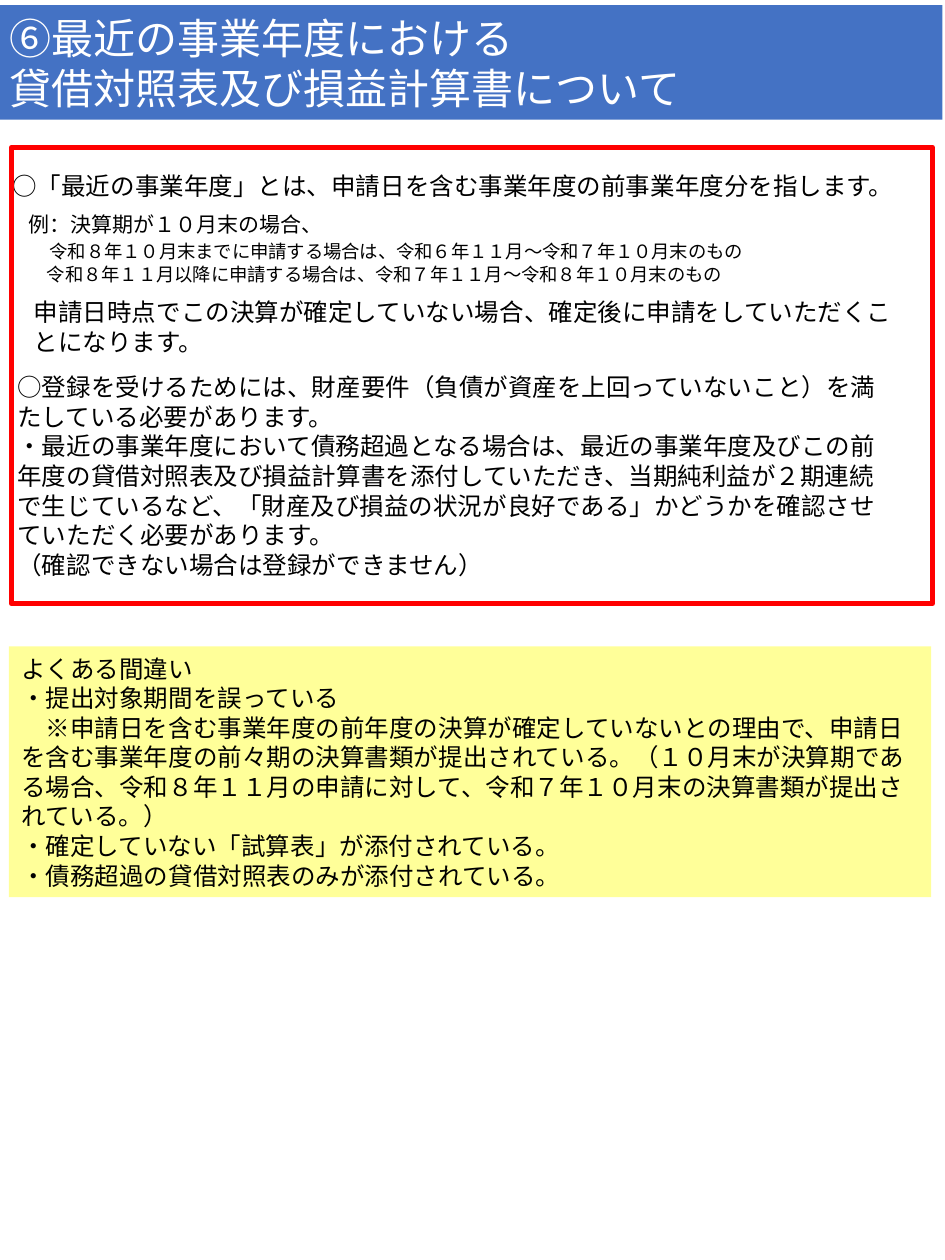
from lxml.etree import SubElement
from pptx import Presentation
from pptx.dml.color import RGBColor as RGB
from pptx.enum.shapes import MSO_SHAPE as Shape
from pptx.enum.text import MSO_ANCHOR as Anchor, PP_ALIGN as Align
from pptx.oxml.ns import qn
from pptx.util import Inches, Pt

THEME = {
    "font": "Noto Sans CJK JP", "leading": 1.21,
    "title": 24, "body": 14, "example": 12, "detail": 10.5,
    "white": "FFFFFF", "black": "000000",
    "blue": "4472C4", "red": "FF0000", "yellow": "FFFF99",
}

TITLE = ["⑥最近の事業年度における", "貸借対照表及び損益計算書について"]
PERIOD = ["○「最近の事業年度」とは、申請日を含む事業年度の前事業年度分を指します。"]
UNSETTLED = ["申請日時点でこの決算が確定していない場合、確定後に申請をしていただくことになります。"]
ASSETS = [
    "○登録を受けるためには、財産要件（負債が資産を上回っていないこと）を満たしている必要があります。",
    "・最近の事業年度において債務超過となる場合は、最近の事業年度及びこの前年度の貸借対照表及び損益計算書を添付していただき、当期純利益が２期連続で生じているなど、「財産及び損益の状況が良好である」かどうかを確認させていただく必要があります。",
    "（確認できない場合は登録ができません）",
]
MISTAKES = [
    "よくある間違い",
    "・提出対象期間を誤っている",
    "　※申請日を含む事業年度の前年度の決算が確定していないとの理由で、申請日を含む事業年度の前々期の決算書類が提出されている。（１０月末が決算期である場合、令和８年１１月の申請に対して、令和７年１０月末の決算書類が提出されている。）",
    "・確定していない「試算表」が添付されている。",
    "・債務超過の貸借対照表のみが添付されている。",
]
EXAMPLE = [
    "例：決算期が１０月末の場合、",
    [("　", "example"),
     ("令和８年１０月末までに申請する場合は、令和６年１１月～令和７年１０月末のもの", "detail")],
    [("　令和８年１１月以降に申請する場合は、令和７年１１月～令和８年１０月末のもの", "detail")],
]

BOXES = [
    {"at": (-0.02, 0.04, 7.5, 0.91), "text": TITLE, "size": "title", "color": "white", "fill": "blue"},
    {"at": (0, 1.3, 7.47, 0.34), "text": PERIOD},
    {"at": (0.09, 1.17, 7.31, 3.62), "line": "red"},
    {"at": (0.17, 2.31, 7.05, 0.57), "text": UNSETTLED},
    {"at": (0.04, 2.9, 7.17, 1.75), "text": ASSETS},
    {"at": (0.07, 5.13, 7.32, 1.99), "text": MISTAKES, "fill": "yellow"},
    {"at": (0.13, 1.63, 6.09, 0.68), "text": EXAMPLE, "size": "example"},
]


def color(name):
    return RGB.from_string(THEME[name])


def write(tf, paragraphs, size="body", ink="black"):
    for name, value in {"word_wrap": True, "vertical_anchor": Anchor.MIDDLE}.items():
        setattr(tf, name, value)
    for i, text in enumerate(paragraphs):
        p = tf.add_paragraph() if i else tf.paragraphs[0]
        runs = [(text, size)] if isinstance(text, str) else text
        largest = max(THEME[key] for _, key in runs)
        p.alignment = Align.LEFT
        p.line_spacing = Pt(round(largest * THEME["leading"], 1))
        for words, key in runs:
            r = p.add_run()
            r.text = words
            for name, value in {"size": Pt(THEME[key]), "name": THEME["font"]}.items():
                setattr(r.font, name, value)
            r.font.color.rgb = color(ink)
            SubElement(r.font._element, qn("a:ea")).set("typeface", THEME["font"])


def add_box(s, box):
    at = [Inches(v) for v in box["at"]]
    if "fill" in box or "line" in box:
        sp = s.shapes.add_shape(Shape.RECTANGLE, *at)
        sp.shadow.inherit = False
        if "fill" in box:
            sp.fill.solid()
            sp.fill.fore_color.rgb = color(box["fill"])
        else:
            sp.fill.background()
        if "line" in box:
            sp.line.color.rgb = color(box["line"])
            sp.line.width = Pt(3)
        else:
            sp.line.fill.background()
    else:
        sp = s.shapes.add_textbox(*at)
    if "text" in box:
        write(sp.text_frame, box["text"], box.get("size", "body"), box.get("color", "black"))


def main():
    """Build the slide on balance sheets and income statements."""
    prs = Presentation()
    prs.slide_width, prs.slide_height = Inches(7.5), Inches(10)
    s = prs.slides.add_slide(prs.slide_layouts[6])
    for box in BOXES:
        add_box(s, box)
    prs.save("out.pptx")


if __name__ == "__main__":
    main()
